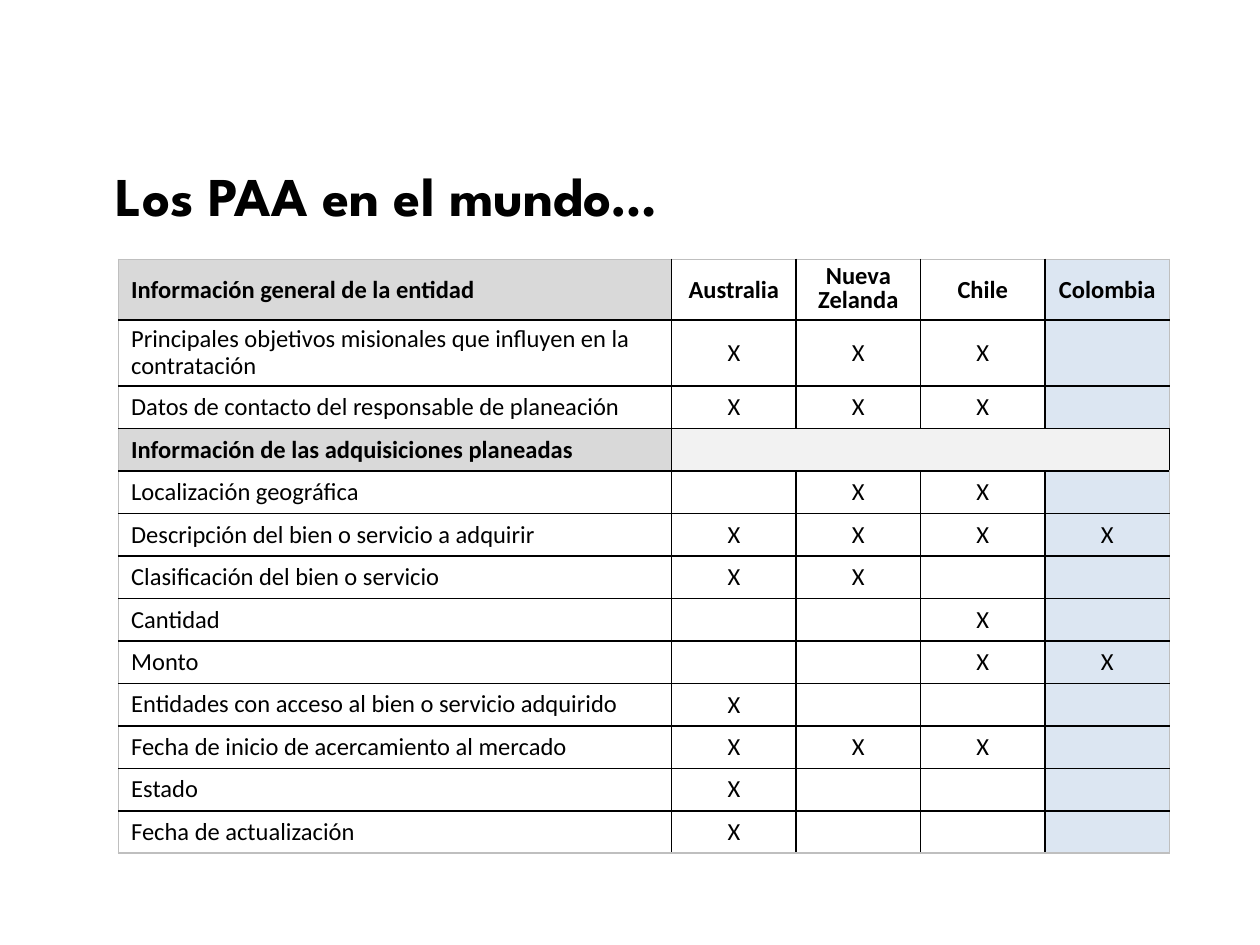
from lxml import etree
from pptx import Presentation
from pptx.dml.color import RGBColor
from pptx.enum import text
from pptx.oxml import ns
from pptx.util import Cm, Pt

COLORS = {
    "ink": "000000",
    "heading": "D9D9D9",
    "band": "F2F2F2",
    "colombia": "DCE6F2",
    "edge": "BFBFBF",
}
COUNTRIES = ["Australia", "Nueva Zelanda", "Chile", "Colombia"]
# Each row: requirement, then one mark per country; None marks a section row
ROWS = [
    ("Principales objetivos misionales que influyen en la contratación", "XXX-"),
    ("Datos de contacto del responsable de planeación", "XXX-"),
    ("Información de las adquisiciones planeadas", None),
    ("Localización geográfica", "-XX-"),
    ("Descripción del bien o servicio a adquirir", "XXXX"),
    ("Clasificación del bien o servicio", "XX--"),
    ("Cantidad", "--X-"),
    ("Monto", "--XX"),
    ("Entidades con acceso al bien o servicio adquirido", "X---"),
    ("Fecha de inicio de acercamiento al mercado", "XXX-"),
    ("Estado", "X---"),
    ("Fecha de actualización", "X---"),
]


class SlideBuilder:
    """Holds the style and the current slide."""

    title_font, body_font = "League Spartan", "Calibri"
    title_size, body_size = Pt(31.2), Pt(14)

    def __init__(self, presentation):
        self.slide = presentation.slides.add_slide(presentation.slide_layouts[5])

    def style(self, paragraph, name, size, bold):
        font = paragraph.font
        font.name, font.size, font.bold = name, size, bold
        font.color.rgb = RGBColor.from_string(COLORS["ink"])

    def title(self, wording, left, top, width, height):
        shape = self.slide.shapes.title
        shape.left, shape.top, shape.width, shape.height = left, top, width, height
        frame = shape.text_frame
        frame.text = wording
        frame.auto_size = text.MSO_AUTO_SIZE.NONE
        frame.vertical_anchor = text.MSO_ANCHOR.MIDDLE
        paragraph = frame.paragraphs[0]
        paragraph.alignment = text.PP_ALIGN.LEFT
        self.style(paragraph, self.title_font, self.title_size, True)

    def table(self, left, top, widths, heights):
        frame = self.slide.shapes.add_table(
            len(heights), len(widths), left, top, sum(widths), sum(heights))
        table = frame.table
        table.first_row = table.horz_banding = False
        for column, width in zip(table.columns, widths):
            column.width = width
        for row, height in zip(table.rows, heights):
            row.height = height
        return table

    def cell(self, cell, wording="", fill=None, bold=False, centered=False,
             spacing=None, middle=False):
        cell.text = wording
        paragraph = cell.text_frame.paragraphs[0]
        if centered:
            paragraph.alignment = text.PP_ALIGN.CENTER
        if centered or middle:
            cell.vertical_anchor = text.MSO_ANCHOR.MIDDLE
        if spacing:
            paragraph.line_spacing = spacing
        self.style(paragraph, self.body_font, self.body_size, bold)
        if not wording:  # keeps empty cells from growing to the default size
            etree.SubElement(paragraph._p, ns.qn("a:endParaRPr"),
                             sz=str(int(self.body_size.pt * 100)))
        if fill:
            cell.fill.solid()
            cell.fill.fore_color.rgb = RGBColor.from_string(COLORS[fill])
        else:
            cell.fill.background()

    def borders(self, table):
        last_row, last_column = len(table.rows) - 1, len(table.columns) - 1
        for r in range(last_row + 1):
            for c in range(last_column + 1):
                properties = table.cell(r, c)._tc.get_or_add_tcPr()
                outer = {"lnL": c == 0, "lnR": c == last_column,
                         "lnT": r == 0, "lnB": r == last_row}
                for index, (side, is_outer) in enumerate(outer.items()):
                    line = etree.Element(ns.qn(f"a:{side}"), w=str(Pt(1)))
                    fill = etree.SubElement(line, ns.qn("a:solidFill"))
                    etree.SubElement(fill, ns.qn("a:srgbClr"),
                                     val=COLORS["edge" if is_outer else "ink"])
                    properties.insert(index, line)


def main():
    presentation = Presentation()
    presentation.slide_width, presentation.slide_height = Cm(25.4), Cm(19.05)
    builder = SlideBuilder(presentation)

    # Title
    builder.title("Los PAA en el mundo…", Cm(2.08), Cm(1.88), Cm(20.35), Cm(4.09))

    # Table grid
    widths = [Cm(11.15)] + [Cm(2.51)] * len(COUNTRIES)
    heights = [Cm(1.21), Cm(1.33)] + [Cm(0.85)] * (len(ROWS) - 1)
    table = builder.table(Cm(2.39), Cm(5.23), widths, heights)

    # Header row
    builder.cell(table.cell(0, 0), "Información general de la entidad", "heading",
                 bold=True, middle=True)
    for c, country in enumerate(COUNTRIES, 1):
        builder.cell(table.cell(0, c), country,
                     "colombia" if country == "Colombia" else None, bold=True,
                     centered=True, spacing=0.8 if " " in country else None)

    # Requirements and marks
    for r, (requirement, marks) in enumerate(ROWS, 1):
        section = marks is None
        builder.cell(table.cell(r, 0), requirement, "heading" if section else None,
                     bold=section, spacing=0.9 if r == 1 else None)
        for c, country in enumerate(COUNTRIES, 1):
            mark = "X" if marks and marks[c - 1] == "X" else ""
            shade = "colombia" if country == "Colombia" else None
            builder.cell(table.cell(r, c), mark, "band" if section else shade,
                         centered=True)
        if section:
            table.cell(r, 1).merge(table.cell(r, len(COUNTRIES)))
    builder.borders(table)

    presentation.save("out.pptx")


if __name__ == "__main__":
    main()
